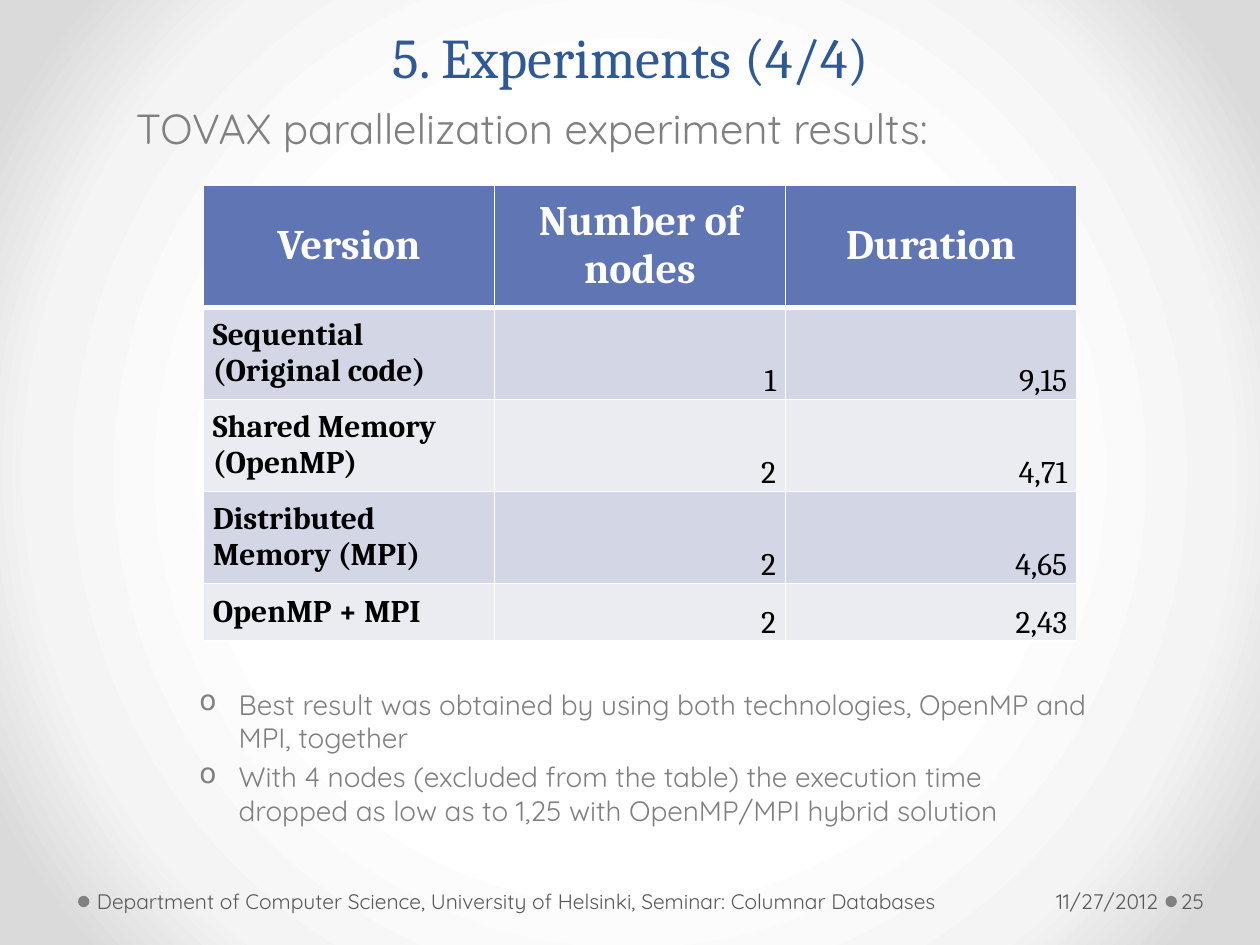
from lxml import etree
from pptx import Presentation, oxml, util as u
from pptx.dml.color import RGBColor
from pptx.enum import shapes, text
from pptx.oxml.ns import nsdecls, qn

Pt = u.Pt
color = RGBColor.from_string
LEFT, CENTER, RIGHT = text.PP_ALIGN.LEFT, text.PP_ALIGN.CENTER, text.PP_ALIGN.RIGHT
TOP, MIDDLE, BOTTOM = text.MSO_ANCHOR.TOP, text.MSO_ANCHOR.MIDDLE, text.MSO_ANCHOR.BOTTOM


def set_font(paragraph, name, size, hex_color, bold=False):
    font = paragraph.font
    font.name, font.size, font.bold = name, Pt(size), bold
    font.color.rgb = color(hex_color)


def add_text(box, lines, name, size, hex_color, align=LEFT, anchor=TOP, insets=(7.2, 7.2)):
    frame = slide.shapes.add_textbox(*map(Pt, box)).text_frame
    frame.word_wrap = True
    frame.vertical_anchor = anchor
    frame.margin_left, frame.margin_right = map(Pt, insets)
    frame.text = "\n".join(lines)
    for paragraph in frame.paragraphs:
        paragraph.alignment = align
        set_font(paragraph, name, size, hex_color)
    return frame


presentation = Presentation()
presentation.slide_width, presentation.slide_height = Pt(720), Pt(540)
slide = presentation.slides.add_slide(presentation.slide_layouts[6])

# Background: round gradient, white in the middle
stops = "".join(
    f'<a:gs pos="{position * 1000}"><a:srgbClr val="{value}"/></a:gs>'
    for position, value in [(50, "FFFFFF"), (76, "F4F4F4"), (92, "DADADA")]
)
slide.background.fill.solid()
solid = next(slide.background._cSld.iter(qn("a:solidFill")))
solid.getparent().replace(solid, oxml.parse_xml(
    f'<a:gradFill {nsdecls("a")} rotWithShape="1"><a:gsLst>{stops}</a:gsLst>'
    '<a:path path="circle"><a:fillToRect l="50000" t="50000" r="50000" b="50000"/></a:path>'
    '</a:gradFill>'
))

# Footer dots
for left in (666, 44.6):
    dot = slide.shapes.add_shape(shapes.MSO_SHAPE.OVAL, Pt(left), Pt(511.9), Pt(6.5), Pt(6.5))
    dot.shadow.inherit = False
    dot.fill.solid()
    dot.fill.fore_color.rgb = color("808080")
    dot.line.fill.background()

# Title
title = add_text((36.7, 9.4, 648, 45.4), ["5. Experiments (4/4)"],
                 "Cambria", 32, "2F5897", CENTER, BOTTOM)
title.paragraphs[0].line_spacing = Pt(58)

# Footer: date, department, slide number
department = "Department of Computer Science, University of Helsinki, Seminar: Columnar Databases"
for left, width, line, align, insets in [
    (575.3, 90, "11/27/2012", RIGHT, (7.2, 3.6)),
    (51.8, 523.5, department, LEFT, (3.6, 7.2)),
    (672.5, 43.9, "25", LEFT, (2.2, 3.6)),
]:
    add_text((left, 500.4, width, 28.8), [line], "Quicksand", 12, "595959", align, MIDDLE, insets)

# Heading above the table
add_text((70.6, 55, 561.6, 38), ["TOVAX parallelization experiment results:"],
         "Quicksand", 24, "808080")

# Conclusions below the table
conclusions = add_text((106.8, 389.2, 525.4, 90), [
    "Best result was obtained by using both technologies, OpenMP and MPI, together",
    "With 4 nodes (excluded from the table) the execution time dropped as low as to 1,25 "
    "with OpenMP/MPI hybrid solution",
], "Quicksand", 16, "808080")
for paragraph in conclusions.paragraphs:
    paragraph.space_after = Pt(3)
    properties = paragraph._p.get_or_add_pPr()
    properties.set("marL", str(Pt(22.5)))
    properties.set("indent", str(-Pt(22.5)))
    bullet = etree.Element(qn("a:buChar"), char="o")
    properties.find(qn("a:defRPr")).addprevious(bullet)

# Results table
rows = [
    ("Version", "Number of nodes", "Duration"),
    ("Sequential (Original code)", "1", "9,15"),
    ("Shared Memory (OpenMP)", "2", "4,71"),
    ("Distributed Memory (MPI)", "2", "4,65"),
    ("OpenMP + MPI", "2", "2,43"),
]
heights = [69.8, 52.6, 52.6, 52.6, 33]
table = slide.shapes.add_table(len(rows), 3, Pt(116.2), Pt(105.8), Pt(499), Pt(sum(heights))).table
for column in table.columns:
    column.width = Pt(166.33)
for row_index, (values, height) in enumerate(zip(rows, heights)):
    table.rows[row_index].height = Pt(height)
    header = row_index == 0
    fill = "6076B4" if header else ("EAECF2", "D2D6E5")[row_index % 2]
    for column_index, value in enumerate(values):
        cell = table.cell(row_index, column_index)
        label = column_index == 0
        cell.text = value
        cell.margin_left = cell.margin_right = Pt(5.4)
        cell.margin_top = cell.margin_bottom = 0
        cell.vertical_anchor = MIDDLE if header or label else BOTTOM
        paragraph = cell.text_frame.paragraphs[0]
        paragraph.alignment = CENTER if header else LEFT if label else RIGHT
        set_font(paragraph, "Cambria", 24 if header else 18,
                 "FFFFFF" if header else "000000", header or label)
        for side in "LRTB":
            thick = (side == "B" and header) or (side == "T" and row_index == 1)
            cell._tc.get_or_add_tcPr().append(oxml.parse_xml(
                f'<a:ln{side} {nsdecls("a")} w="{Pt(3 if thick else 1)}">'
                f'<a:solidFill><a:srgbClr val="FFFFFF"/></a:solidFill></a:ln{side}>'
            ))
        cell.fill.solid()
        cell.fill.fore_color.rgb = color(fill)

presentation.save("out.pptx")
